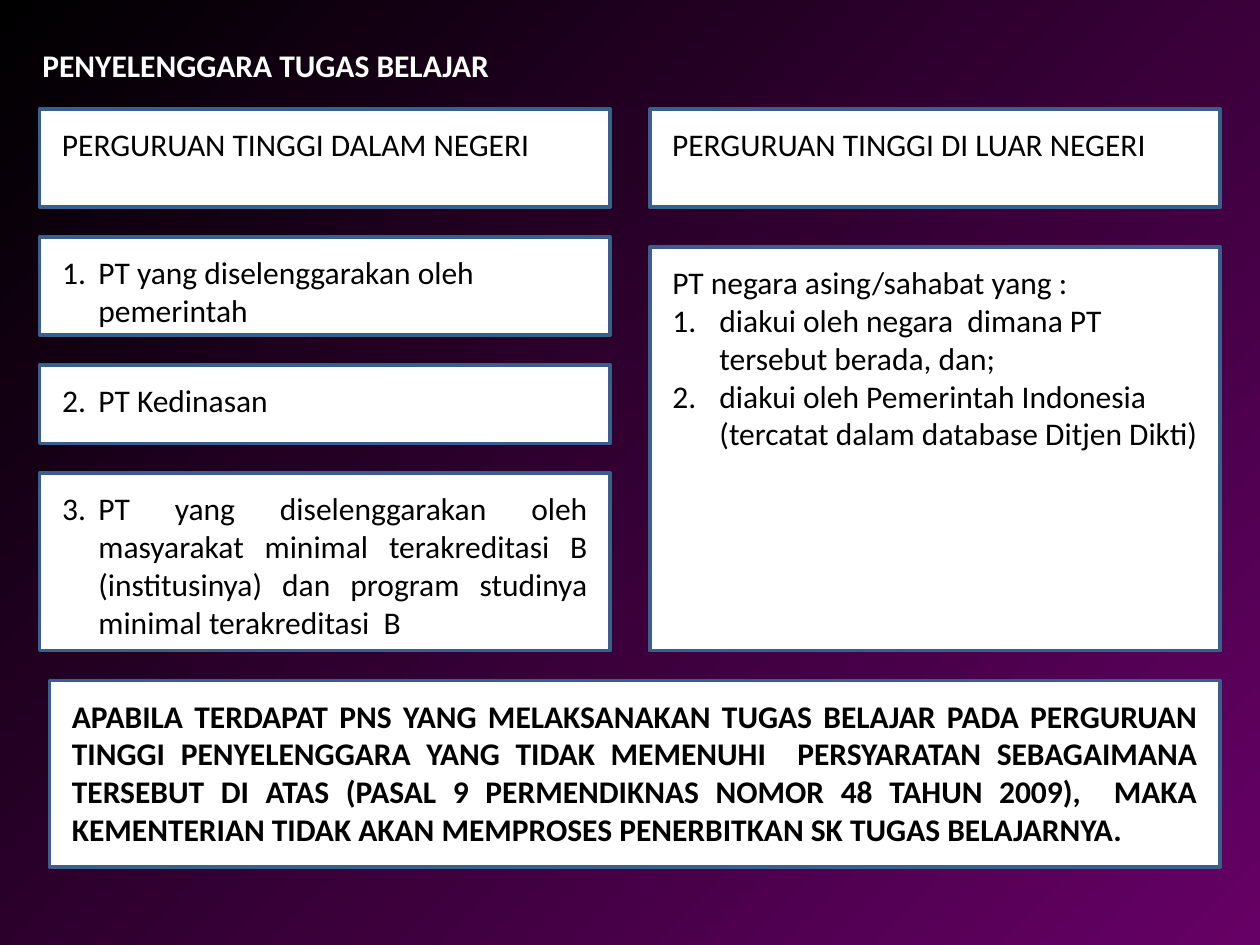
import pptx
import pptx.util
import pptx.dml.color
import pptx.enum.shapes
import pptx.enum.text
import pptx.oxml
import lxml.etree
from pptx.util import Cm

NAMESPACE = "http://schemas.openxmlformats.org/drawingml/2006/main"
ALIGN = pptx.enum.text.PP_ALIGN
GAP = 0.6
INSET = 0.2
TOP = 2.2
HEADING_HEIGHT = 1.98
COLUMN_WIDTH = 11.5

LEFT_ITEMS = [
    ("1.\tPT yang diselenggarakan oleh pemerintah", 1.98, 1.8, ALIGN.LEFT),
    ("2.\tPT Kedinasan", 1.58, 1.02, ALIGN.LEFT),
    ("3.\tPT yang diselenggarakan oleh masyarakat minimal terakreditasi B "
     "(institusinya) dan program studinya minimal terakreditasi  B", 3.58, 3.33, ALIGN.JUSTIFY),
]
RIGHT_LIST = [
    "PT negara asing/sahabat yang :",
    "diakui oleh negara  dimana PT tersebut berada, dan;",
    "diakui oleh Pemerintah Indonesia (tercatat dalam database Ditjen Dikti)",
]
NOTICE = (
    "APABILA TERDAPAT PNS YANG MELAKSANAKAN TUGAS BELAJAR PADA PERGURUAN TINGGI "
    "PENYELENGGARA YANG TIDAK MEMENUHI  PERSYARATAN SEBAGAIMANA TERSEBUT DI ATAS "
    "(PASAL 9 PERMENDIKNAS NOMOR 48 TAHUN 2009),  MAKA KEMENTERIAN TIDAK AKAN "
    "MEMPROSES PENERBITKAN SK TUGAS BELAJARNYA."
)


def paint(color, value):
    color.rgb = pptx.dml.color.RGBColor.from_string(value)


def set_background(page):
    fill = page.background.fill
    fill.gradient()
    for stop, value in zip(fill.gradient_stops, ("660066", "000000")):
        paint(stop.color, value)
    gradient = page.element.find(f".//{{{NAMESPACE}}}gradFill")
    linear = gradient.find(f"{{{NAMESPACE}}}lin")
    circle = pptx.oxml.parse_xml(
        f'<a:path xmlns:a="{NAMESPACE}" path="circle"><a:fillToRect l="100000" t="100000"/></a:path>')
    gradient.replace(linear, circle)


def place(shape, left, top, width, height):
    shape.left, shape.top = Cm(left), Cm(top)
    shape.width, shape.height = Cm(width), Cm(height)


def set_list_format(para, indent, numbered):
    properties = para._p.get_or_add_pPr()
    properties.set("marL", str(Cm(indent)))
    properties.set("indent", str(-Cm(indent)))
    if numbered:
        font = lxml.etree.SubElement(properties, f"{{{NAMESPACE}}}buFont")
        font.set("typeface", "+mj-lt")
        bullet = lxml.etree.SubElement(properties, f"{{{NAMESPACE}}}buAutoNum")
        bullet.set("type", "arabicPeriod")
    else:
        lxml.etree.SubElement(properties, f"{{{NAMESPACE}}}buNone")


def write(shape, lines, color="000000", bold=False, align=ALIGN.LEFT, indent=0):
    frame = shape.text_frame
    frame.text = "\n".join(lines)
    frame.word_wrap = True
    frame.vertical_anchor = pptx.enum.text.MSO_ANCHOR.TOP
    frame.auto_size = pptx.enum.text.MSO_AUTO_SIZE.SHAPE_TO_FIT_TEXT
    for index, para in enumerate(frame.paragraphs):
        para.alignment = align
        para.space_before = pptx.util.Pt(0)
        set_list_format(para, indent, index > 0)
        for span in para.runs:
            span.font.name = "Calibri"
            span.font.size = pptx.util.Pt(18)
            span.font.bold = bold
            paint(span.font.color, color)


def add_panel(page, box, lines, text_height, placeholder=None, **style):
    left, top, width, height = box
    panel = page.shapes.add_shape(
        pptx.enum.shapes.MSO_SHAPE.RECTANGLE, Cm(left), Cm(top), Cm(width), Cm(height))
    panel.shadow.inherit = False
    panel.fill.solid()
    paint(panel.fill.fore_color, "FFFFFF")
    paint(panel.line.color, "3A5F8C")
    panel.line.width = pptx.util.Pt(2)
    if placeholder is None:
        text = page.shapes.add_textbox(0, 0, 0, 0)
    else:
        text = placeholder
        text.element.getparent().append(text.element)
    place(text, left + INSET, top + INSET, width - 2 * INSET, text_height)
    write(text, lines, **style)


def add_title(page, left, top, width, height):
    title = page.shapes.title
    place(title, left, top, width, height)
    write(title, ["PENYELENGGARA TUGAS BELAJAR"], color="FFFFFF", bold=True)


def add_domestic_column(page, left, top, bodies):
    add_panel(page, (left, top, COLUMN_WIDTH, HEADING_HEIGHT),
              ["PERGURUAN TINGGI DALAM NEGERI"], 1.02)
    top += HEADING_HEIGHT + GAP
    for body, (text, height, text_height, align) in zip(bodies, LEFT_ITEMS):
        add_panel(page, (left, top, COLUMN_WIDTH, height), [text], text_height,
                  body, align=align, indent=0.73)
        top += height + GAP
    return top


def add_foreign_column(page, left, top, bottom, body):
    add_panel(page, (left, top, COLUMN_WIDTH, HEADING_HEIGHT),
              ["PERGURUAN TINGGI DI LUAR NEGERI"], 1.02)
    list_top = top + HEADING_HEIGHT + GAP + INSET
    add_panel(page, (left, list_top, COLUMN_WIDTH, bottom - list_top),
              RIGHT_LIST, 4.88, body, indent=0.95)


def add_notice(page, left, top, width, height):
    add_panel(page, (left, top, width, height), [NOTICE], 3.33,
              bold=True, align=ALIGN.JUSTIFY)


def main():
    deck = pptx.Presentation()
    deck.slide_width, deck.slide_height = Cm(25.4), Cm(19.05)
    page = deck.slides.add_slide(deck.slide_layouts.get_by_name("Comparison"))
    set_background(page)
    bodies = [page.placeholders[index] for index in (1, 2, 3, 4)]
    add_title(page, 0.6, 0.8, 24, 1.02)
    notice_top = add_domestic_column(page, 0.8, TOP, bodies[:3])
    add_foreign_column(page, 13.1, TOP, notice_top - GAP, bodies[3])
    add_notice(page, 1, notice_top, 23.6, 3.76)
    deck.save("out.pptx")


if __name__ == "__main__":
    main()
